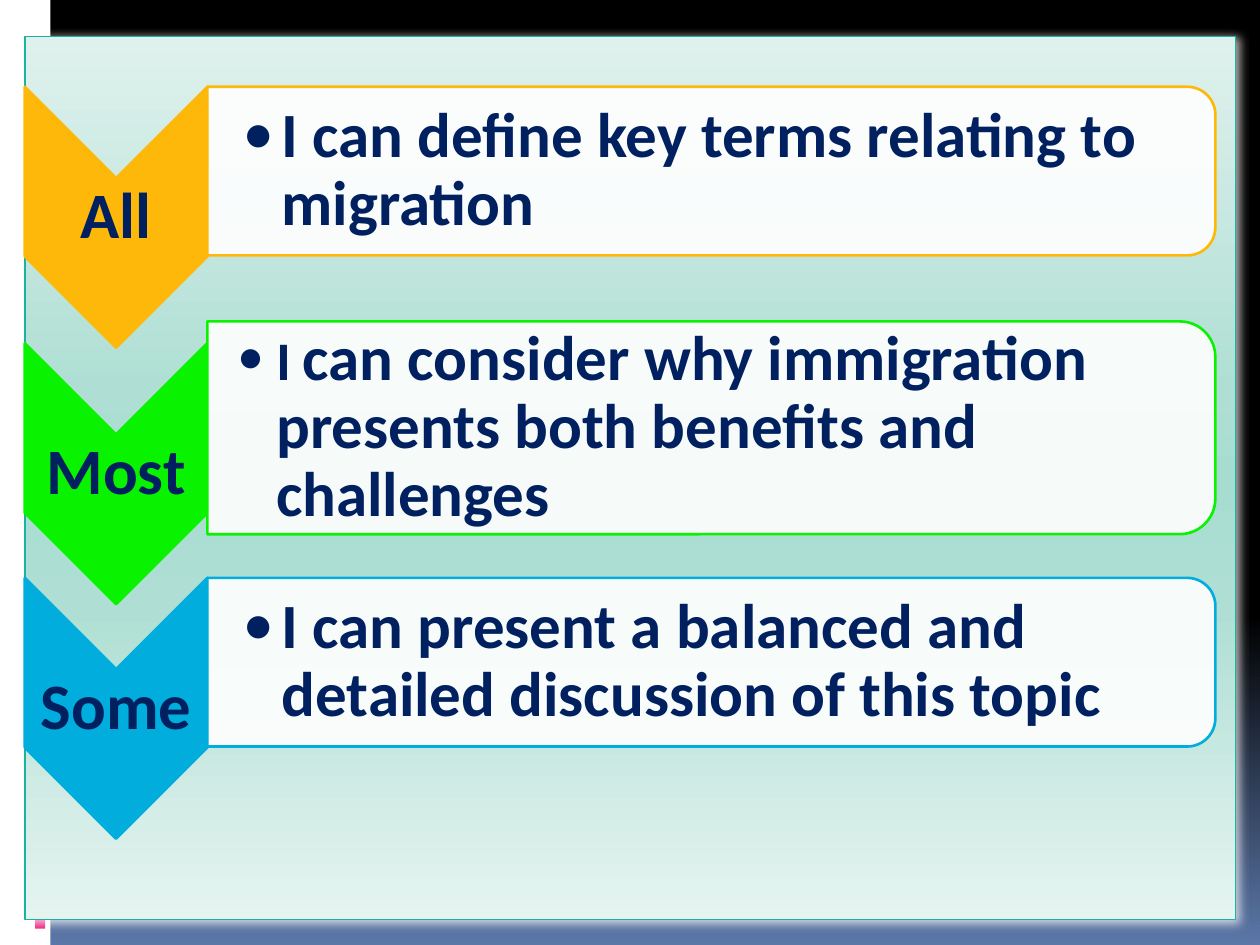
from dataclasses import dataclass

from lxml.etree import SubElement
from pptx import Presentation
from pptx.dml.color import RGBColor
from pptx.enum.shapes import MSO_SHAPE
from pptx.enum.text import MSO_ANCHOR, PP_ALIGN
from pptx.oxml.ns import qn
from pptx.util import Cm, Pt

NAVY = "002060"
CHEVRON_LENGTH, CHEVRON_WIDTH = 5.26, 3.68


@dataclass
class Box:
    """A rectangle in centimetres."""
    left: float
    top: float
    width: float
    height: float

    def lengths(self):
        """Return the four lengths for python-pptx."""
        return Cm(self.left), Cm(self.top), Cm(self.width), Cm(self.height)

    def turned(self):
        """Return the unrotated box that covers this one after a quarter turn."""
        shift = (self.width - self.height) / 2
        return Box(self.left + shift, self.top - shift, self.height, self.width)


def color(value):
    """Turn a hex string into a colour."""
    return RGBColor.from_string(value)


def set_gradient(fill, element, stops):
    """Give a fill a top-to-bottom gradient with the given stops."""
    fill.gradient()
    fill.gradient_angle = 270
    stop_list = next(element.iter(qn("a:gsLst")))
    for stop in list(stop_list):
        stop_list.remove(stop)
    for position, value in stops:
        stop = SubElement(stop_list, qn("a:gs"), pos=str(position * 1000))
        SubElement(stop, qn("a:srgbClr"), val=value)


def add_block(slide, kind, box, fill=None, line=None, line_width=1.5, turned=False):
    """Add a preset shape, turned clockwise if asked, that covers the box."""
    frame = box.turned() if turned else box
    shape = slide.shapes.add_shape(kind, *frame.lengths())
    shape.shadow.inherit = False
    shape.rotation = 90 if turned else 0
    if fill:
        shape.fill.solid()
        shape.fill.fore_color.rgb = color(fill)
    if line:
        shape.line.color.rgb = color(line)
        shape.line.width = Pt(line_width)
    else:
        shape.line.fill.background()
    return shape


def add_text(slide, box, runs, left_inset=0.08):
    """Add a vertically centred text box and return its paragraph."""
    frame = slide.shapes.add_textbox(*box.lengths()).text_frame
    frame.word_wrap = True
    frame.vertical_anchor = MSO_ANCHOR.MIDDLE
    frame.margin_left = Cm(left_inset)
    frame.margin_top = frame.margin_right = frame.margin_bottom = Cm(0.08)
    paragraph = frame.paragraphs[0]
    paragraph.line_spacing = 0.9
    paragraph.font.name = "Calibri"
    paragraph.font.bold = True
    paragraph.font.color.rgb = color(NAVY)
    for text, size in runs:
        run = paragraph.add_run()
        run.text = text
        run.font.size = Pt(size)
    return paragraph


def add_bullet(paragraph):
    """Give a paragraph a round bullet with a hanging indent."""
    properties = paragraph._p.get_or_add_pPr()
    properties.set("marL", str(Cm(0.79)))
    properties.set("indent", str(-Cm(0.79)))
    SubElement(properties, qn("a:buFont"), typeface="Calibri")
    bullet = SubElement(properties, qn("a:buChar"), char="•")
    defaults = properties.find(qn("a:defRPr"))
    if defaults is not None:
        properties.remove(defaults)
        bullet.addnext(defaults)


def add_backdrop(slide, box):
    """Fill the background and add the side band with its accent strip."""
    set_gradient(slide.background.fill, slide.background._cSld,
                 [(0, "000000"), (65, "000000"), (100, "5B77A8")])
    add_block(slide, MSO_SHAPE.RECTANGLE,
              Box(box.left, box.top, 1.02, box.height), "FFFFFF")
    add_block(slide, MSO_SHAPE.RECTANGLE,
              Box(box.left + 0.71, box.top + 14.02, 0.2, 4.7), "EA157A")


def add_panel(slide, box):
    """Add the mint panel with its pale soft edge."""
    panel = add_block(slide, MSO_SHAPE.RECTANGLE, box, line="1AB39F", line_width=0.94)
    set_gradient(panel.fill, panel._element.spPr,
                 [(0, "DFF1ED"), (40, "AFDFD4"), (50, "A7DDD1"),
                  (65, "AFDFD4"), (100, "E6F4F0")])
    effects = panel._element.spPr.find(qn("a:effectLst"))
    shadow = SubElement(effects, qn("a:outerShdw"), blurRad=str(Cm(0.2)),
                        dist=str(Cm(0.05)), dir="2700000", algn="ctr",
                        rotWithShape="0")
    tint = SubElement(shadow, qn("a:srgbClr"), val="FFFFFF")
    SubElement(tint, qn("a:alpha"), val="75000")


def add_level(slide, box, accent, label, runs, card_top, card_height, inset):
    """Add one chevron with its label and the card beside it."""
    chevron = Box(box.left, box.top, CHEVRON_WIDTH, CHEVRON_LENGTH)
    card = Box(box.left + CHEVRON_WIDTH, box.top + card_top,
               box.width - CHEVRON_WIDTH, card_height)
    add_block(slide, MSO_SHAPE.CHEVRON, chevron, accent, accent, turned=True)
    add_text(slide, chevron, [(label, 37)]).alignment = PP_ALIGN.CENTER
    shape = add_block(slide, MSO_SHAPE.ROUND_2_SAME_RECTANGLE, card,
                      "FFFFFF", accent, turned=True)
    fill_color = next(shape._element.spPr.iter(qn("a:srgbClr")))
    SubElement(fill_color, qn("a:alpha"), val="90000")
    text_box = Box(card.left, card.top, card.width - 0.17, card.height)
    add_bullet(add_text(slide, text_box, runs, inset))


def main():
    """Build the slide of learning goals."""
    presentation = Presentation()
    presentation.slide_width, presentation.slide_height = Cm(25.4), Cm(19.05)
    slide = presentation.slides.add_slide(presentation.slide_layouts[6])
    add_backdrop(slide, Box(0, 0, 25.4, 19.05))
    add_panel(slide, Box(0.51, 0.74, 24.4, 17.8))
    levels = [
        (1.75, "FEB80A", "All",
         [("I can define key terms relating to migration", 36)], 0, 3.4, 0.71),
        (6.92, "09F200", "Most",
         [("I ", 31),
          ("can consider why immigration presents both benefits and challenges", 36)],
         -0.44, 4.29, 0.6),
        (11.65, "00ADDC", "Some",
         [("I can present a balanced and detailed discussion of this topic", 36)],
         0, 3.4, 0.71),
    ]
    for top, *details in levels:
        add_level(slide, Box(0.5, top, 24, CHEVRON_LENGTH), *details)
    presentation.save("out.pptx")


if __name__ == "__main__":
    main()
